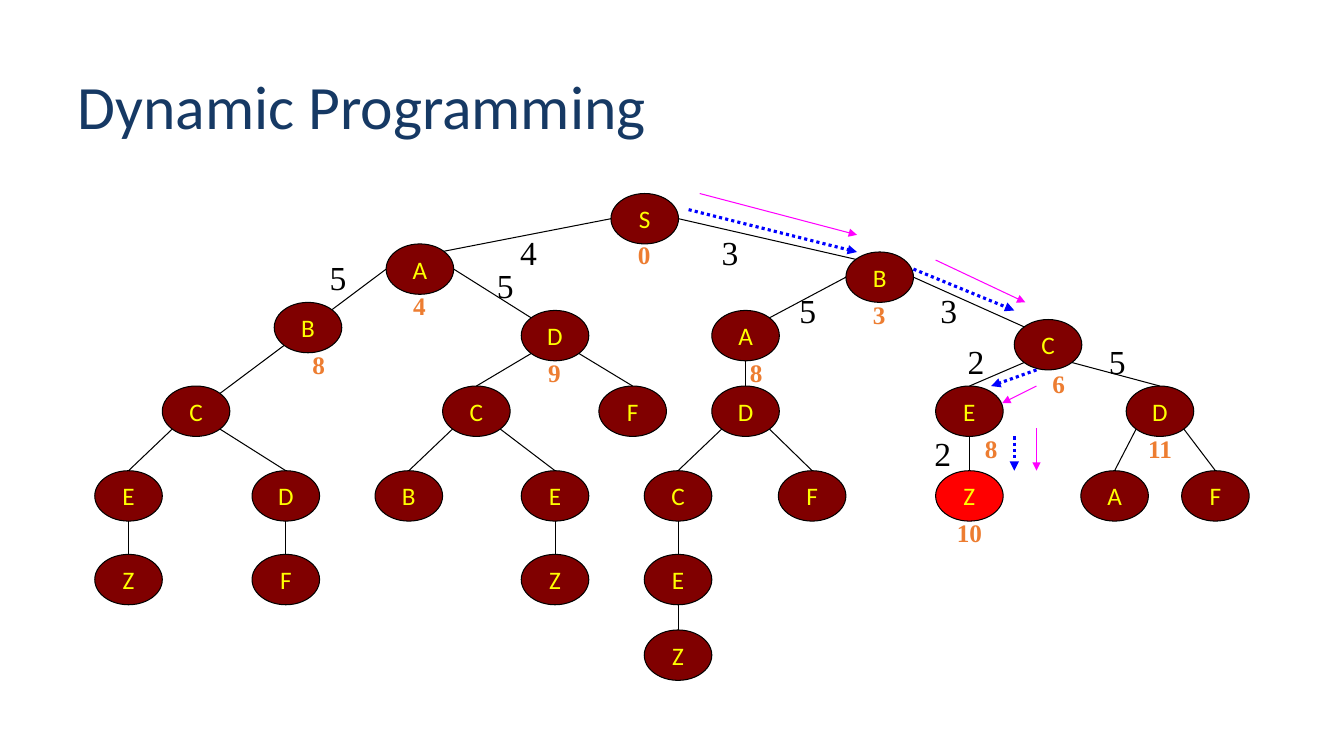
from math import sqrt

from lxml import etree
from pptx import Presentation
from pptx.dml.color import RGBColor
from pptx.enum.dml import MSO_LINE_DASH_STYLE as Dash
from pptx.enum.shapes import MSO_CONNECTOR as Connector, MSO_SHAPE as Shape
from pptx.enum.text import MSO_ANCHOR as Anchor, MSO_AUTO_SIZE as AutoSize, PP_ALIGN as Align
from pptx.oxml.ns import qn
from pptx.util import Inches, Pt

NODE_W, NODE_H = 0.67, 0.5
SERIF, SANS = "Times New Roman", "Calibri"
BLACK, MAROON, RED, YELLOW = "000000", "800000", "FF0000", "FFFF00"
NAVY, ORANGE, BLUE, MAGENTA = "163964", "ED7D31", "0000FF", "FF00FF"
GOAL = "SBCEZ"

# Where an edge touches an ellipse, in half widths and half heights from its centre
D = 1 / sqrt(2)
SITES = {"top": (0, -1), "bottom": (0, 1), "left": (-1, 0), "right": (1, 0),
         "upper left": (-D, -D), "upper right": (D, -D),
         "lower left": (-D, D), "lower right": (D, D)}

# Path from the root: left, top, site on the parent, site on the node
SEARCH_TREE = {
    "S": (6.06, 1.92, None, None),
    "SA": (3.83, 2.42, "left", "upper right"),
    "SB": (8.39, 2.5, "right", "upper left"),
    "SAB": (2.72, 3, "left", "upper right"),
    "SAD": (5.17, 3.08, "right", "upper left"),
    "SBA": (7.06, 3.08, "left", "upper right"),
    "SBC": (10.06, 3.17, "right", "upper left"),
    "SABC": (1.61, 3.83, "lower left", "upper right"),
    "SADC": (4.39, 3.83, "lower left", "top"),
    "SADF": (5.94, 3.83, "lower right", "top"),
    "SBAD": (7.06, 3.83, "bottom", "top"),
    "SBCE": (9.28, 3.83, "lower left", "top"),
    "SBCD": (11.17, 3.83, "lower right", "top"),
    "SABCE": (0.94, 4.67, "lower left", "top"),
    "SABCD": (2.5, 4.67, "lower right", "top"),
    "SADCB": (3.72, 4.67, "lower left", "top"),
    "SADCE": (5.17, 4.67, "lower right", "top"),
    "SBADC": (6.39, 4.67, "lower left", "top"),
    "SBADF": (7.72, 4.67, "lower right", "top"),
    "SBCEZ": (9.28, 4.67, "bottom", "top"),
    "SBCDA": (10.72, 4.67, "lower left", "top"),
    "SBCDF": (11.72, 4.67, "lower right", "top"),
    "SABCEZ": (0.94, 5.5, "bottom", "top"),
    "SABCDF": (2.5, 5.5, "bottom", "top"),
    "SADCEZ": (5.17, 5.5, "bottom", "top"),
    "SBADCE": (6.39, 5.5, "bottom", "top"),
    "SBADCEZ": (6.39, 6.25, "bottom", "top"),
}

# Start and end of each arrow along the best path
DOTTED_ARROWS = [((6.83, 2.08), (8.5, 2.5)), ((9.06, 2.67), (10.06, 3.08)),
                 ((10.28, 3.67), (9.83, 3.83)), ((10.06, 4.33), (10.06, 4.67))]
THIN_ARROWS = [((6.94, 1.92), (8.5, 2.33)), ((9.28, 2.58), (10.17, 3)),
               ((10.28, 3.83), (9.94, 4)), ((10.28, 4.25), (10.28, 4.67))]

# Text, left, top
STEP_COSTS = [("4", 5.06, 2.25), ("3", 7.06, 2.25), ("5", 7.83, 2.83),
              ("3", 9.23, 2.83), ("2", 9.5, 3.33), ("5", 10.9, 3.33),
              ("2", 9.17, 4.25), ("5", 3.17, 2.5), ("5", 4.83, 2.58)]
PATH_COSTS = [("0", 6.17, 2.33), ("4", 3.94, 2.83), ("3", 8.5, 2.92),
              ("8", 7.28, 3.5), ("6", 10.28, 3.6), ("8", 2.94, 3.42),
              ("9", 5.28, 3.5), ("8", 9.61, 4.25), ("11", 11.17, 4.25),
              ("10", 9.28, 5.08)]


def rgb(code):
    return RGBColor.from_string(code)


def write(frame, text, font, size, color, align=Align.LEFT, bold=False):
    paragraph = frame.paragraphs[0]
    paragraph.alignment = align
    run = paragraph.add_run()
    run.text = text
    run.font.name, run.font.size, run.font.bold = font, Pt(size), bold
    run.font.color.rgb = rgb(color)
    return paragraph


def add_label(slide, left, top, width, height, wrap=True):
    frame = slide.shapes.add_textbox(*map(Inches, (left, top, width, height))).text_frame
    frame.word_wrap = wrap
    return frame


def add_line(slide, start, end, color=BLACK, width=0.75, dash=None, arrow=False):
    line = slide.shapes.add_connector(Connector.STRAIGHT, *map(Inches, (*start, *end)))
    line.line.color.rgb = rgb(color)
    line.line.width = Pt(width)
    if dash:
        line.line.dash_style = dash
    if arrow:
        etree.SubElement(line.line._get_or_add_ln(), qn("a:tailEnd"), type="triangle")
    etree.SubElement(line._element.spPr, qn("a:effectLst"))


def add_node(slide, path):
    left, top = SEARCH_TREE[path][:2]
    node = slide.shapes.add_shape(Shape.OVAL, *map(Inches, (left, top, NODE_W, NODE_H)))
    node.shadow.inherit = False
    node.fill.solid()
    node.fill.fore_color.rgb = rgb(RED if path == GOAL else MAROON)
    node.line.color.rgb = rgb(BLACK)
    node.line.width = Pt(0.75)
    frame = node.text_frame
    frame.word_wrap = False
    frame.vertical_anchor = Anchor.MIDDLE
    write(frame, path[-1], SANS, 18, YELLOW, Align.CENTER)


def site_point(path, site):
    left, top = SEARCH_TREE[path][:2]
    dx, dy = SITES[site]
    return left + NODE_W / 2 * (1 + dx), top + NODE_H / 2 * (1 + dy)


def main():
    deck = Presentation()
    deck.slide_width, deck.slide_height = Inches(13.33), Inches(7.5)
    slide = deck.slides.add_slide(deck.slide_layouts[6])

    # Title
    title = add_label(slide, 0.67, 0.46, 9.67, 1.25)
    title.vertical_anchor = Anchor.MIDDLE
    write(title, "Dynamic Programming", SANS, 44, NAVY).line_spacing = 0.9

    # Search tree
    for path, (_, _, parent_site, node_site) in SEARCH_TREE.items():
        add_node(slide, path)
        if parent_site:
            add_line(slide, site_point(path[:-1], parent_site), site_point(path, node_site))

    # Best path
    for start, end in DOTTED_ARROWS:
        add_line(slide, start, end, BLUE, 2.25, Dash.ROUND_DOT, arrow=True)
    for start, end in THIN_ARROWS:
        add_line(slide, start, end, MAGENTA, arrow=True)

    # Cost of each step and of each path so far
    for cost, left, top in STEP_COSTS:
        frame = add_label(slide, left, top, 0.37, 0.51, wrap=False)
        frame.auto_size = AutoSize.SHAPE_TO_FIT_TEXT
        write(frame, cost, SERIF, 24, BLACK)
    for cost, left, top in PATH_COSTS:
        frame = add_label(slide, left, top, 0.44 if len(cost) == 1 else NODE_W, 0.4)
        frame.auto_size = AutoSize.SHAPE_TO_FIT_TEXT
        write(frame, cost, SERIF, 18, ORANGE, Align.CENTER, bold=True)

    deck.save("out.pptx")


if __name__ == "__main__":
    main()
